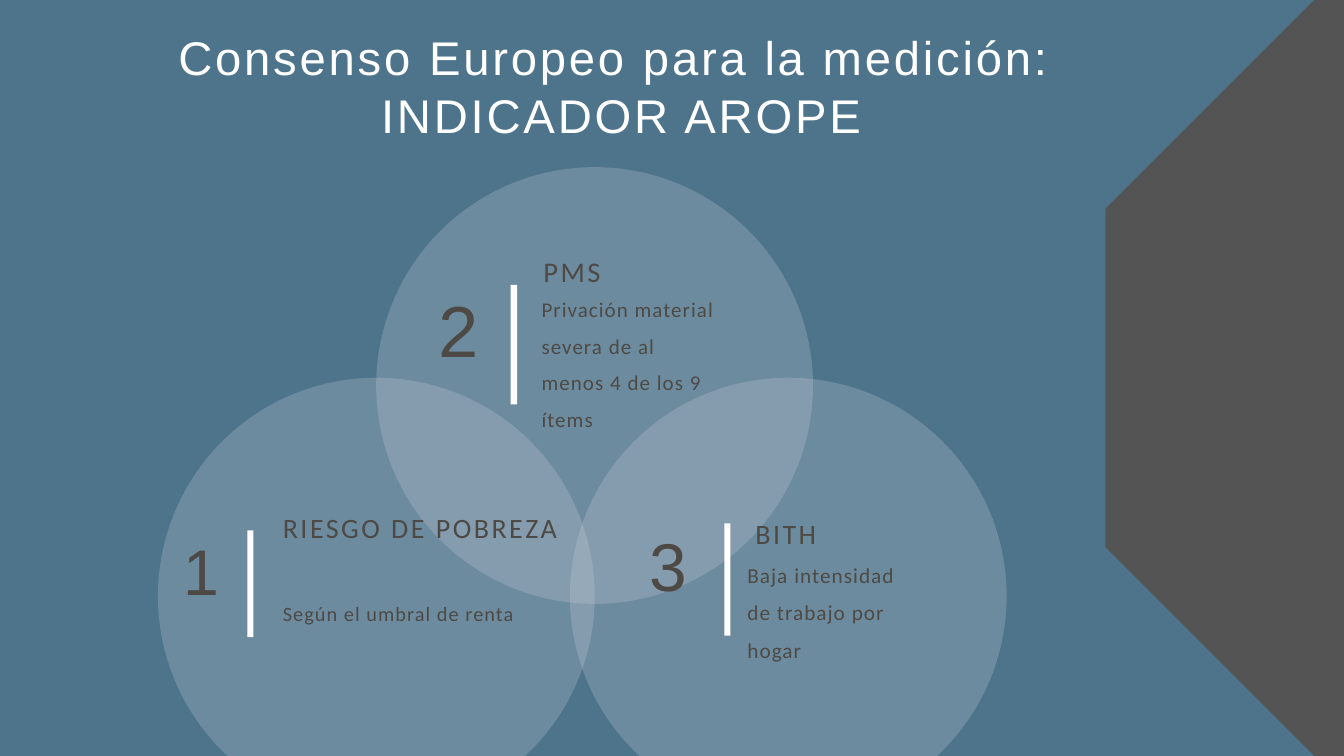
import pptx
import pptx.dml.color
import pptx.enum.shapes
import pptx.enum.text
import pptx.oxml.ns
import pptx.util
from lxml import etree

Cm = pptx.util.Cm
Pt = pptx.util.Pt
RGBColor = pptx.dml.color.RGBColor
Shapes = pptx.enum.shapes.MSO_SHAPE
Align = pptx.enum.text.PP_ALIGN

BLUE = RGBColor(0x4E, 0x74, 0x8B)
PALE = RGBColor(0xC7, 0xD0, 0xD8)
GRAY = RGBColor(0x54, 0x54, 0x54)
INK = RGBColor(0x4D, 0x4A, 0x46)
WHITE = RGBColor(0xFF, 0xFF, 0xFF)
BAR_WHITE = RGBColor(0xFF, 0xFD, 0xFD)

DIAMETER = 16.51

# Circle corner on the slide, then boxes (left, top, width, height) inside it, in cm.
# Text styles are (size, line spacing, letter spacing) in points.
CIRCLES = [
    dict(
        corner=(5.97, 14.28), bar=(3.38, 5.77, 0.23, 4.04),
        texts=[
            ("1", (0.97, 5.72, 2.24, 2.95), "Arial", (69.1, 85, 4.1)),
            ("RIESGO DE POBREZA", (4.72, 4.57, 11.33, 3.23), "Calibri", (30, 48.6, 2.7)),
            ("Según el umbral de renta", (4.72, 8.03, 11.33, 1.17), "Calibri", (21.8, 38.1, 1.1)),
        ],
    ),
    dict(
        corner=(14.22, 6.32), bar=(5.08, 4.45, 0.25, 4.52),
        texts=[
            ("2", (2.36, 4.37, 2.51, 3.35), "Arial", (77.4, 95.2, 4.6)),
            ("PMS", (6.32, 2.82, 12.7, 1.63), "Calibri", (30.5, 49.5, 2.7)),
            ("Privación material severa de al menos 4 de los 9 ítems",
             (6.25, 4.45, 6.83, 5.46), "Calibri", (22.5, 39.4, 1.1)),
        ],
    ),
    dict(
        corner=(21.54, 14.28), bar=(5.84, 5.51, 0.23, 4.24),
        texts=[
            ("3", (3.02, 5.44, 2.36, 3.15), "Arial", (72.4, 89, 4.3)),
            ("BITH", (7.01, 4.8, 11.86, 1.6), "Calibri", (30, 48.6, 2.7)),
            ("Baja intensidad de trabajo por hogar",
             (6.71, 6.53, 6.55, 4.11), "Calibri", (22.8, 40, 1.1)),
        ],
    ),
]


def inside(corner, box):
    left, top, width, height = box
    return corner[0] + left, corner[1] + top, width, height


def write_text(shape, text, *, font, style, color, align=Align.LEFT):
    """Fill a shape with one paragraph per line of text."""
    size, line_spacing, letter_spacing = style
    frame = shape.text_frame
    frame.word_wrap = True
    frame.auto_size = pptx.enum.text.MSO_AUTO_SIZE.NONE
    frame.vertical_anchor = pptx.enum.text.MSO_ANCHOR.TOP
    frame.margin_left = frame.margin_top = frame.margin_right = frame.margin_bottom = 0
    frame.text = text
    for paragraph in frame.paragraphs:
        paragraph.alignment = align
        paragraph.line_spacing = Pt(line_spacing)
        for run in paragraph.runs:
            run.font.name = font
            run.font.size = Pt(size)
            run.font.color.rgb = color
            run._r.get_or_add_rPr().set("spc", str(round(letter_spacing * 100)))


def add_filled(slide, kind, box, color, opacity=None):
    shape = slide.shapes.add_shape(kind, *map(Cm, box))
    shape.shadow.inherit = False
    shape.line.fill.background()
    shape.fill.solid()
    shape.fill.fore_color.rgb = color
    if opacity is not None:
        color_element = shape._element.spPr.find(".//" + pptx.oxml.ns.qn("a:srgbClr"))
        alpha = etree.SubElement(color_element, pptx.oxml.ns.qn("a:alpha"))
        alpha.set("val", str(opacity * 1000))
    return shape


def place_title(slide, box):
    title = slide.shapes.title
    title.left, title.top, title.width, title.height = map(Cm, box)
    write_text(title, "Consenso Europeo para la medición:\n INDICADOR AROPE",
               font="Arial", style=(50.6, 62.2, 3), color=WHITE, align=Align.CENTER)


def add_circle_content(slide, corner, bar, texts):
    for text, box, font, style in texts:
        text_box = slide.shapes.add_textbox(*map(Cm, inside(corner, box)))
        write_text(text_box, text, font=font, style=style, color=INK)
    add_filled(slide, Shapes.RECTANGLE, inside(corner, bar), BAR_WHITE)


def add_venn(slide):
    """Draw every circle before any text, so that no circle veils a word."""
    for circle in CIRCLES:
        add_filled(slide, Shapes.OVAL, (*circle["corner"], DIAMETER, DIAMETER), PALE, opacity=26)
    for circle in CIRCLES:
        add_circle_content(slide, **circle)


def add_side_octagon(slide, box):
    octagon = add_filled(slide, Shapes.OCTAGON, box, GRAY)
    octagon.adjustments[0] = 0.29


def main():
    presentation = pptx.Presentation()
    presentation.slide_width = Cm(50.8)
    presentation.slide_height = Cm(28.58)
    title_only = presentation.slide_layouts[5]
    slide = presentation.slides.add_slide(title_only)
    slide.background.fill.solid()
    slide.background.fill.fore_color.rgb = BLUE

    place_title(slide, (1.14, 1.02, 44.09, 4.37))
    add_venn(slide)
    add_side_octagon(slide, (41.78, -0.94, 30.45, 30.45))
    presentation.save("out.pptx")


if __name__ == "__main__":
    main()
